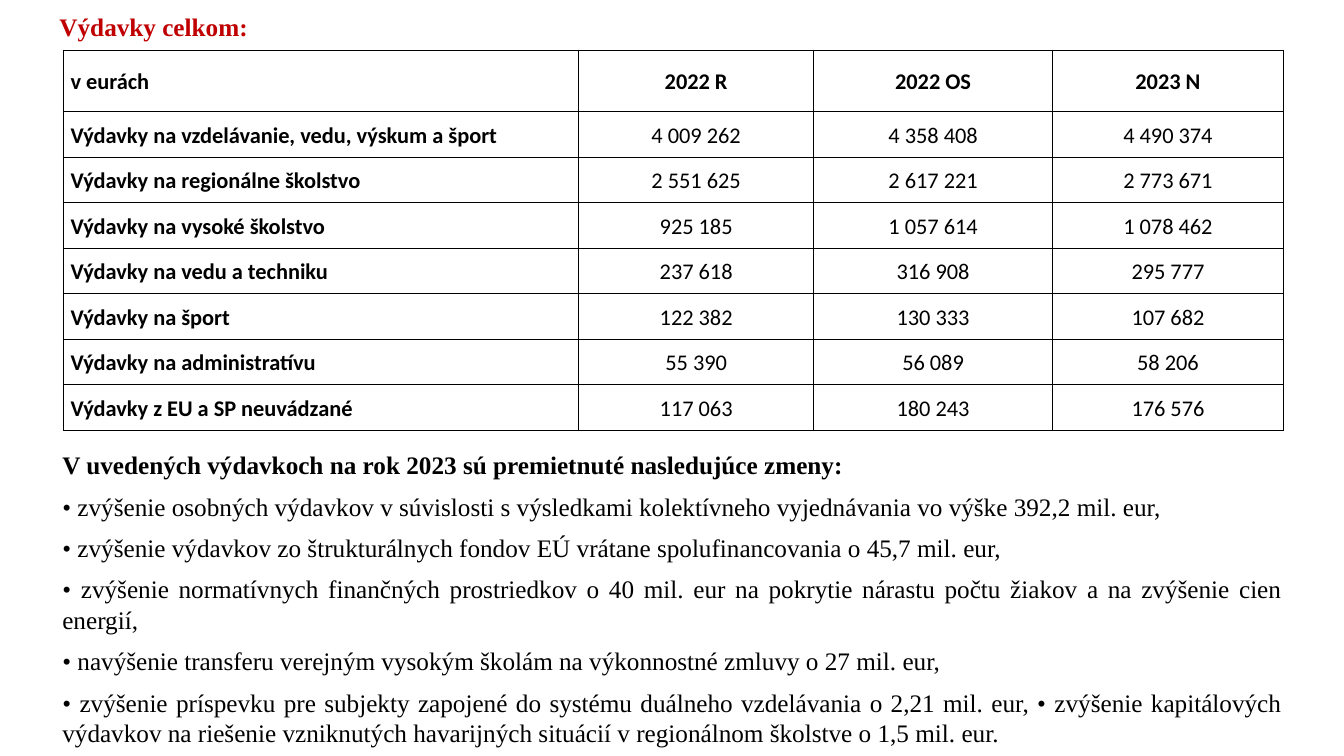
import pptx
import pptx.dml.color
import pptx.enum.text
import pptx.oxml
import pptx.oxml.ns
import pptx.util

Inches = pptx.util.Inches
Pt = pptx.util.Pt
RGBColor = pptx.dml.color.RGBColor
Align = pptx.enum.text.PP_ALIGN
Anchor = pptx.enum.text.MSO_ANCHOR

BLACK = RGBColor(0x00, 0x00, 0x00)
WHITE = RGBColor(0xFF, 0xFF, 0xFF)
RED = RGBColor(0xC0, 0x00, 0x00)

HEADERS = ["v eurách", "2022 R", "2022 OS", "2023 N"]
EXPENSES = [
    ("Výdavky na vzdelávanie, vedu, výskum a šport", 4009262, 4358408, 4490374),
    ("Výdavky na regionálne školstvo", 2551625, 2617221, 2773671),
    ("Výdavky na vysoké školstvo", 925185, 1057614, 1078462),
    ("Výdavky na vedu a techniku", 237618, 316908, 295777),
    ("Výdavky na šport", 122382, 130333, 107682),
    ("Výdavky na administratívu", 55390, 56089, 58206),
    ("Výdavky z EU a SP neuvádzané", 117063, 180243, 176576),
]
COLUMN_WIDTHS = [5.11, 2.33, 2.37, 2.29]
TABLE_HEIGHT = 3.77
HEADER_HEIGHT = 0.61

CHANGES_HEADING = "V uvedených výdavkoch na rok 2023 sú premietnuté nasledujúce zmeny:"
CHANGES = [
    "• zvýšenie osobných výdavkov v súvislosti s výsledkami kolektívneho vyjednávania "
    "vo výške 392,2 mil. eur,",
    "• zvýšenie výdavkov zo štrukturálnych fondov EÚ vrátane spolufinancovania "
    "o 45,7 mil. eur,",
    "• zvýšenie normatívnych finančných prostriedkov o 40 mil. eur na pokrytie nárastu "
    "počtu žiakov a na zvýšenie cien energií,",
    "• navýšenie transferu verejným vysokým školám na výkonnostné zmluvy o 27 mil. eur,",
    "• zvýšenie príspevku pre subjekty zapojené do systému duálneho vzdelávania "
    "o 2,21 mil. eur, • zvýšenie kapitálových výdavkov na riešenie vzniknutých havarijných "
    "situácií v regionálnom školstve o 1,5 mil. eur.",
]


class ExpenseSlide:
    """Holds the text style and the current slide."""

    text_font = "Times New Roman"
    table_font = "Calibri"
    text_size = Pt(18)
    table_size = Pt(16)
    space_after = Pt(8)
    line_spacing = 1.07

    def __init__(self, presentation):
        self.slide = presentation.slides.add_slide(presentation.slide_layouts[6])

    def style_paragraph(self, paragraph, font, size, color, bold, align, spacing=None):
        paragraph.alignment = align
        paragraph.space_after = self.space_after
        paragraph.line_spacing = spacing
        for run in paragraph.runs:
            run.font.name = font
            run.font.size = size
            run.font.bold = bold
            run.font.color.rgb = color

    def add_text(self, left, top, width, height, lines, color=BLACK, spacing=None):
        """Adds justified paragraphs, the first of them bold."""
        shape = self.slide.shapes.add_textbox(
            Inches(left), Inches(top), Inches(width), Inches(height))
        text_frame = shape.text_frame
        text_frame.word_wrap = True
        text_frame.text = "\n".join(lines)
        for index, paragraph in enumerate(text_frame.paragraphs):
            self.style_paragraph(paragraph, self.text_font, self.text_size, color,
                                 index == 0, Align.JUSTIFY, spacing)
        return text_frame

    def add_borders(self, cell):
        properties = cell._tc.get_or_add_tcPr()
        namespace = pptx.oxml.ns.nsdecls("a")
        for position, side in enumerate(("lnL", "lnR", "lnT", "lnB")):
            properties.insert(position, pptx.oxml.parse_xml(
                f'<a:{side} {namespace} w="{Pt(1)}"><a:solidFill>'
                f'<a:srgbClr val="{BLACK}"/></a:solidFill></a:{side}>'))

    def fill_cell(self, cell, text, bold, align):
        cell.text_frame.text = text
        cell.vertical_anchor = Anchor.MIDDLE
        cell.margin_left = cell.margin_right = Inches(0.07)
        cell.margin_top = cell.margin_bottom = 0
        cell.fill.solid()
        cell.fill.fore_color.rgb = WHITE
        self.style_paragraph(cell.text_frame.paragraphs[0], self.table_font,
                             self.table_size, BLACK, bold, align, self.line_spacing)
        self.add_borders(cell)

    def add_table(self, left, top, rows):
        table = self.slide.shapes.add_table(
            len(rows), len(COLUMN_WIDTHS), Inches(left), Inches(top),
            Inches(sum(COLUMN_WIDTHS)), Inches(TABLE_HEIGHT)).table
        table.horz_banding = False
        for column, width in zip(table.columns, COLUMN_WIDTHS):
            column.width = Inches(width)
        row_height = (TABLE_HEIGHT - HEADER_HEIGHT) / (len(rows) - 1)
        for row_index, values in enumerate(rows):
            table.rows[row_index].height = Inches(
                row_height if row_index else HEADER_HEIGHT)
            for column_index, text in enumerate(values):
                self.fill_cell(table.cell(row_index, column_index), text,
                               row_index == 0 or column_index == 0,
                               Align.CENTER if column_index else Align.LEFT)


def main():
    presentation = pptx.Presentation()
    presentation.slide_width = Inches(13.33)
    presentation.slide_height = Inches(7.5)
    expense_slide = ExpenseSlide(presentation)

    # Title
    title = expense_slide.add_text(0, 0, 6.67, 0.44, ["Výdavky celkom:"], RED,
                                   expense_slide.line_spacing)
    title.margin_left = Inches(0.59)
    title.margin_top = Inches(0.09)

    # Expense table, thousands separated by spaces
    rows = [HEADERS]
    for label, *amounts in EXPENSES:
        rows.append([label] + [f"{amount:,}".replace(",", " ") for amount in amounts])
    expense_slide.add_table(0.63, 0.5, rows)

    # Changes for 2023
    expense_slide.add_text(0.52, 4.41, 12.3, 3.09, [CHANGES_HEADING] + CHANGES)

    presentation.save("out.pptx")


if __name__ == "__main__":
    main()
